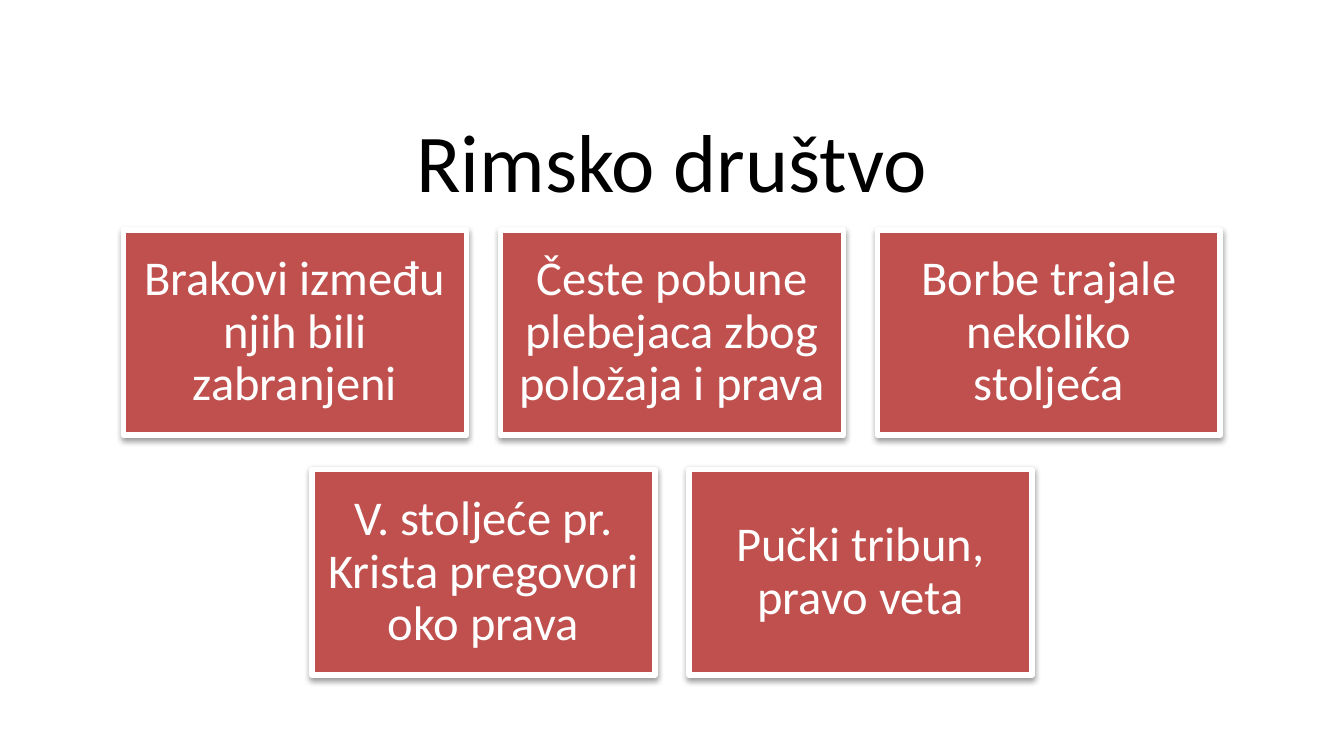
from lxml import etree
from pptx import Presentation
from pptx.dml.color import RGBColor
from pptx.enum.shapes import MSO_SHAPE as Shape
from pptx.enum.text import MSO_ANCHOR as Anchor, PP_ALIGN as Align
from pptx.oxml import parse_xml
from pptx.util import Pt

COLORS = {"title": "000000", "card": "C0504D", "light": "FFFFFF", "shadow": "000000"}
SLIDE_WIDTH, SLIDE_HEIGHT = 720, 405
CARD_WIDTH = 183.6
CARD_HEIGHT = CARD_WIDTH * 0.6
GAP = CARD_WIDTH * 0.1
CARDS_TOP = 123.1

SHADOW = f"""<a:effectLst xmlns:a="http://schemas.openxmlformats.org/drawingml/2006/main">
  <a:outerShdw blurRad="{Pt(3.1)}" dist="{Pt(1.6)}" dir="5400000" rotWithShape="0">
    <a:srgbClr val="{COLORS['shadow']}"><a:alpha val="38000"/></a:srgbClr>
  </a:outerShdw>
</a:effectLst>"""

rows = [
    [
        "Brakovi između njih bili zabranjeni",
        "Česte pobune plebejaca zbog položaja i prava",
        "Borbe trajale nekoliko stoljeća",
    ],
    ["V. stoljeće pr. Krista pregovori oko prava", "Pučki tribun, pravo veta"],
]


def write(shape, text, size, color, inset, after):
    frame = shape.text_frame
    frame.word_wrap = True
    frame.vertical_anchor = Anchor.MIDDLE
    for side, value in inset.items():
        setattr(frame, f"margin_{side}", Pt(value))
    paragraph = frame.paragraphs[0]
    paragraph.text = text
    layout = {"alignment": Align.CENTER, "line_spacing": 0.9, "space_after": Pt(after)}
    for name, value in layout.items():
        setattr(paragraph, name, value)
    for name, value in {"name": "Calibri", "size": Pt(size)}.items():
        setattr(paragraph.font, name, value)
    paragraph.font.color.rgb = RGBColor.from_string(COLORS[color])


prs = Presentation()
prs.slide_width, prs.slide_height = Pt(SLIDE_WIDTH), Pt(SLIDE_HEIGHT)
slide = prs.slides.add_slide(prs.slide_layouts[6])

# Title
title = slide.shapes.add_textbox(Pt(36), Pt(60.5), Pt(648), Pt(56.2))
write(title, "Rimsko društvo", 44, "title",
      {"left": 7.2, "right": 7.2, "top": 3.6, "bottom": 3.6}, 0)

# Cards, each row centred on the slide
card_inset = dict.fromkeys(["left", "right", "top", "bottom"], 7.8)
for row, statements in enumerate(rows):
    row_width = len(statements) * (CARD_WIDTH + GAP) - GAP
    row_left = (SLIDE_WIDTH - row_width) / 2
    top = CARDS_TOP + row * (CARD_HEIGHT + GAP)
    for column, statement in enumerate(statements):
        left = row_left + column * (CARD_WIDTH + GAP)
        card = slide.shapes.add_shape(
            Shape.RECTANGLE, Pt(left), Pt(top), Pt(CARD_WIDTH), Pt(CARD_HEIGHT))
        card.fill.solid()
        card.fill.fore_color.rgb = RGBColor.from_string(COLORS["card"])
        card.line.color.rgb = RGBColor.from_string(COLORS["light"])
        card.line.width = Pt(3)
        card._element.spPr.append(parse_xml(SHADOW))
        write(card, statement, 26, "light", card_inset, 9.1)

prs.save("out.pptx")
